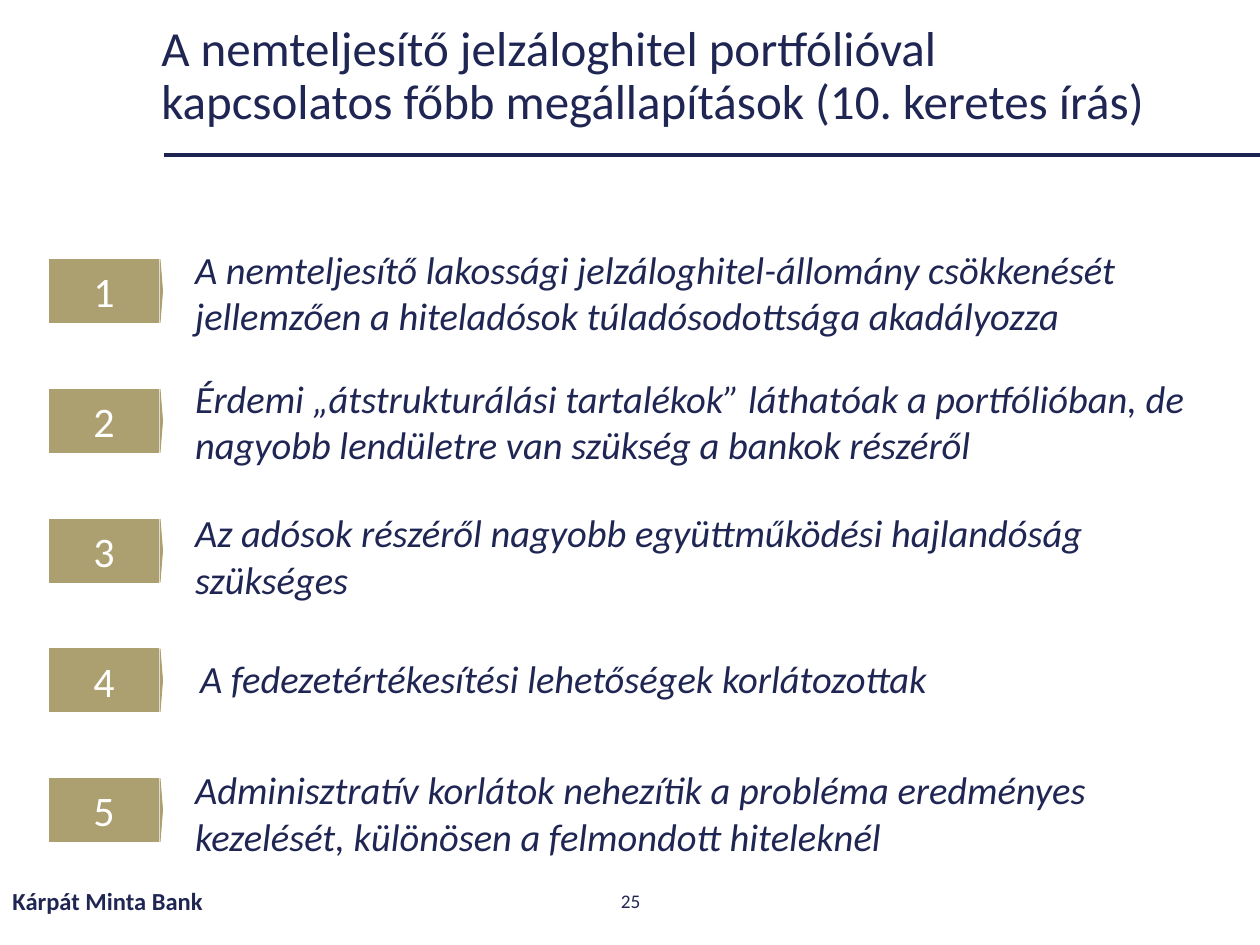
import pptx
import pptx.util
import pptx.dml.color
import pptx.enum.shapes
import pptx.enum.text
import pptx.oxml
from pptx.util import Inches, Pt

TITLE = "A nemteljesítő jelzáloghitel portfólióval kapcsolatos főbb megállapítások (10. keretes írás)"
BANK = "Kárpát Minta Bank"
PAGE = "25"
# finding, left, top, height
FINDINGS = [
    ("A nemteljesítő lakossági jelzáloghitel-állomány csökkenését jellemzően "
     "a hiteladósok túladósodottsága akadályozza", 1.45, 1.9, 0.84),
    ("Érdemi „átstrukturálási tartalékok” láthatóak a portfólióban, de nagyobb "
     "lendületre van szükség a bankok részéről", 1.45, 2.92, 0.84),
    ("Az adósok részéről nagyobb együttműködési hajlandóság szükséges", 1.45, 3.99, 0.84),
    ("A fedezetértékesítési lehetőségek korlátozottak", 1.49, 5.15, 0.47),
    ("Adminisztratív korlátok nehezítik a probléma eredményes kezelését, "
     "különösen a felmondott hiteleknél", 1.45, 6.03, 0.84),
]
COLORS = {"text": "202653", "rule": "1E2452", "gold": "AC9F70", "white": "FFFFFF"}
FONT = "Calibri"
TAG_TOP, TAG_STEP, TAG_HEIGHT = 2.06, 1.03, 0.5
SHAPES = pptx.enum.shapes.MSO_SHAPE
ALIGN = pptx.enum.text.PP_ALIGN


def rgb(name):
    return pptx.dml.color.RGBColor.from_string(COLORS[name])


def place(shape, left, top, width, height):
    shape.left, shape.top = Inches(left), Inches(top)
    shape.width, shape.height = Inches(width), Inches(height)


def write(shape, text, size, color="text", align=ALIGN.LEFT, bold=False, italic=False, spacing=None):
    frame = shape.text_frame
    frame.word_wrap = True
    frame.auto_size = pptx.enum.text.MSO_AUTO_SIZE.NONE
    frame.vertical_anchor = pptx.enum.text.MSO_ANCHOR.MIDDLE
    paragraph = frame.paragraphs[0]
    paragraph.alignment = align
    paragraph.line_spacing = spacing
    run = paragraph.add_run()
    run.text = text
    font = run.font
    font.name, font.size, font.bold, font.italic = FONT, Pt(size), bold, italic
    font.color.rgb = rgb(color)


def add_text(slide, text, box, size, **style):
    write(slide.shapes.add_textbox(*map(Inches, box)), text, size, **style)


def add_gold(group, kind, box):
    shape = group.shapes.add_shape(kind, *map(Inches, box))
    shape.shadow.inherit = False
    shape.fill.solid()
    shape.fill.fore_color.rgb = rgb("gold")
    shape.line.color.rgb = rgb("gold")
    shape.line.width = Pt(0.5)
    return shape


def add_tag(slide, number, top):
    """Number box with a thin pointed edge on its right."""
    group = slide.shapes.add_group_shape()
    number_box = add_gold(group, SHAPES.RECTANGLE, (0.39, top, 0.87, TAG_HEIGHT))
    write(number_box, str(number), 24, color="white", align=ALIGN.CENTER)
    edge = add_gold(group, SHAPES.PENTAGON, (1.27, top, 0.02, TAG_HEIGHT))
    edge.adjustments[0] = 1


def main():
    deck = pptx.Presentation()
    deck.slide_width, deck.slide_height = Inches(10), Inches(7.5)
    slide = deck.slides.add_slide(deck.slide_layouts[5])

    rule = slide.shapes.add_connector(
        pptx.enum.shapes.MSO_CONNECTOR.STRAIGHT,
        Inches(1.3), Inches(1.23), Inches(10), Inches(1.23))
    rule.line.color.rgb = rgb("rule")
    rule.line.width = Pt(2.25)
    rule._element.spPr.append(pptx.oxml.parse_xml(
        '<a:effectLst xmlns:a="http://schemas.openxmlformats.org/drawingml/2006/main"/>'))

    title = slide.shapes.title
    place(title, 1.18, 0.2, 8.15, 0.83)
    write(title, TITLE, 28, spacing=0.9)

    for index, (finding, left, top, height) in enumerate(FINDINGS):
        add_tag(slide, index + 1, TAG_TOP + index * TAG_STEP)
        add_text(slide, finding, (left, top, 8.12, height), 22, italic=True)

    add_text(slide, BANK, (0, 6.95, 3.38, 0.4), 14, bold=True)
    add_text(slide, PAGE, (3.88, 6.95, 2.25, 0.4), 11, align=ALIGN.CENTER)
    deck.save("out.pptx")


if __name__ == "__main__":
    main()
